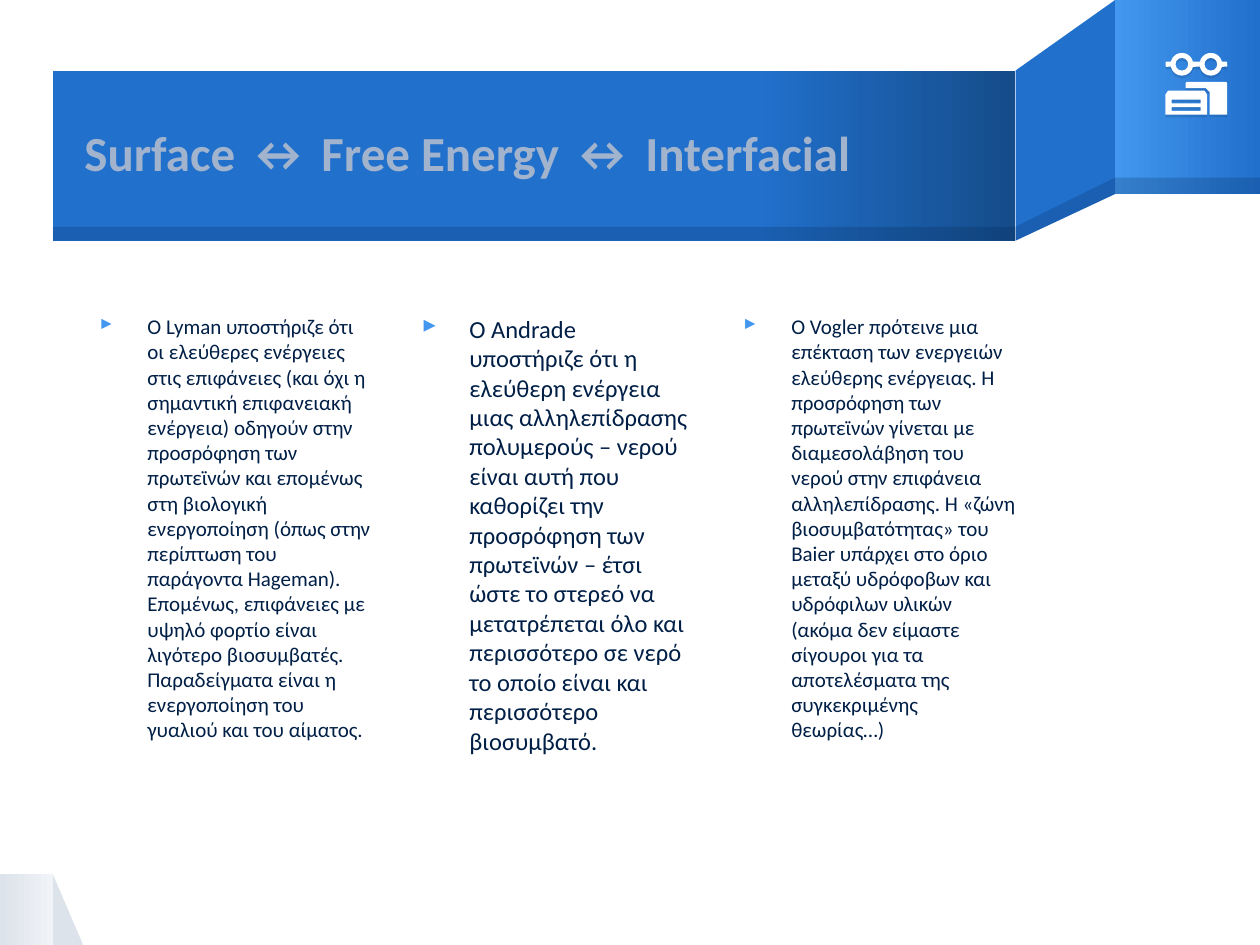
from pptx import Presentation
from pptx.dml.color import RGBColor
from pptx.enum.shapes import MSO_SHAPE
from pptx.enum.text import MSO_ANCHOR, PP_ALIGN
from pptx.oxml import parse_xml
from pptx.oxml.ns import nsdecls, qn
from pptx.oxml.xmlchemy import OxmlElement
from pptx.util import Inches, Pt

RECT, RIGHT_TRIANGLE = MSO_SHAPE.RECTANGLE, MSO_SHAPE.RIGHT_TRIANGLE
ROUNDED, DONUT = MSO_SHAPE.ROUNDED_RECTANGLE, MSO_SHAPE.DONUT
TOP, MIDDLE, LEFT = MSO_ANCHOR.TOP, MSO_ANCHOR.MIDDLE, PP_ALIGN.LEFT

# Content
TITLE = "Surface ↔ Free Energy ↔ Interfacial"
THEORIES = [
    ("Ο Lyman υποστήριζε ότι οι ελεύθερες ενέργειες στις επιφάνειες (και όχι η "
     "σημαντική επιφανειακή ενέργεια) οδηγούν στην προσρόφηση των πρωτεϊνών και "
     "επομένως στη βιολογική ενεργοποίηση (όπως στην περίπτωση του παράγοντα Hageman). "
     "Επομένως, επιφάνειες με υψηλό φορτίο είναι λιγότερο βιοσυμβατές. Παραδείγματα "
     "είναι η ενεργοποίηση του γυαλιού και του αίματος.", "small"),
    ("Ο Andrade υποστήριζε ότι η ελεύθερη ενέργεια μιας αλληλεπίδρασης πολυμερούς – "
     "νερού είναι αυτή που καθορίζει την προσρόφηση των πρωτεϊνών – έτσι ώστε το "
     "στερεό να μετατρέπεται όλο και περισσότερο σε νερό το οποίο είναι και "
     "περισσότερο βιοσυμβατό.", "large"),
    ("Ο Vogler πρότεινε μια επέκταση των ενεργειών ελεύθερης ενέργειας. Η προσρόφηση "
     "των πρωτεϊνών γίνεται με διαμεσολάβηση του νερού στην επιφάνεια αλληλεπίδρασης. "
     "Η «ζώνη βιοσυμβατότητας» του Baier υπάρχει στο όριο μεταξύ υδρόφοβων και "
     "υδρόφιλων υλικών (ακόμα δεν είμαστε σίγουροι για τα αποτελέσματα της "
     "συγκεκριμένης θεωρίας…)", "small"),
]

THEME = {
    "font": "Calibri", "title": 28, "small": 12, "large": 14,
    "ink": "001F46", "muted": "A1B3CD", "bright": "4397EE", "blue": "2170CC",
    "deep": "154C8A", "grey": "DDE3EB", "pale": "F0F3F7", "white": "FFFFFF",
}

# Layout in inches
SLIDE_W, SLIDE_H = 10, 7.5
BAND_LEFT, BAND_TOP, BAND_RIGHT, BAND_BOTTOM = 0.42, 0.56, 8.06, 1.91
TAB_LEFT, TAB_BOTTOM = 8.85, 1.54
BAND_EDGE, TAB_EDGE = 1.8, 1.41
CORNER_TOP = 6.94
TEXT_LEFT, TEXT_TOP, TEXT_H = 0.67, 2.49, 3.96
COLUMN_W = 2.28
COLUMN_GAP = (BAND_RIGHT - TEXT_LEFT - len(THEORIES) * COLUMN_W) / (len(THEORIES) - 1)

prs = Presentation()
prs.slide_width, prs.slide_height = Inches(SLIDE_W), Inches(SLIDE_H)
slide = prs.slides.add_slide(prs.slide_layouts[6])


def color(name):
    return RGBColor.from_string(THEME[name])


def paint(shape, fill, alpha=None, shadow=False):
    """Fill with a colour name or with a left-to-right list of (percent, name)."""
    shape.shadow.inherit = False
    shape.line.fill.background()
    if isinstance(fill, str):
        shape.fill.solid()
        shape.fill.fore_color.rgb = color(fill)
        if alpha:
            node = shape.fill._xPr.find(".//" + qn("a:srgbClr"))
            node.append(parse_xml(f'<a:alpha {nsdecls("a")} val="{alpha * 1000}"/>'))
    else:
        shape.fill.gradient()
        shape.fill.gradient_angle = 0
        stops = shape.fill._xPr.find(".//" + qn("a:gsLst"))
        for stop in list(stops):
            stops.remove(stop)
        for percent, name in fill:
            stops.append(parse_xml(
                f'<a:gs {nsdecls("a")} pos="{percent * 1000}">'
                f'<a:srgbClr val="{THEME[name]}"/></a:gs>'))
    if shadow:
        effects = shape._element.spPr.find(qn("a:effectLst"))
        effects.append(parse_xml(
            f'<a:outerShdw {nsdecls("a")} blurRad="0" dist="{Pt(1.5)}" dir="5400000">'
            f'<a:srgbClr val="{THEME["ink"]}"><a:alpha val="15000"/></a:srgbClr>'
            '</a:outerShdw>'))
    return shape


def block(kind, left, top, right, bottom, fill, **look):
    return paint(slide.shapes.add_shape(
        kind, Inches(left), Inches(top), Inches(right - left), Inches(bottom - top)),
        fill, **look)


def outline(contours, fill, **look):
    builder = None
    for contour in contours:
        points = [(Inches(x), Inches(y)) for x, y in contour]
        if builder is None:
            builder = slide.shapes.build_freeform(*points[0])
        else:
            builder.move_to(*points[0])
        builder.add_line_segments(points[1:], close=True)
    return paint(builder.convert_to_shape(), fill, **look)


def corners(left, top, right, bottom):
    return [(left, top), (right, top), (right, bottom), (left, bottom)]


def write(text, left, top, width, height, size, ink, bold=False, anchor=TOP,
          line_spacing=None, bullet=None):
    box = slide.shapes.add_textbox(Inches(left), Inches(top), Inches(width), Inches(height))
    frame = box.text_frame
    frame.word_wrap, frame.vertical_anchor = True, anchor
    frame.margin_left = frame.margin_top = frame.margin_right = frame.margin_bottom = 0
    paragraph = frame.paragraphs[0]
    paragraph.alignment = LEFT
    if line_spacing:
        paragraph.line_spacing = line_spacing
    if bullet:
        paragraph.space_before = Pt(6)
        props = paragraph._p.get_or_add_pPr()
        props.set("marL", str(Inches(0.5)))
        props.set("indent", str(Inches(-0.38)))
        props.append(parse_xml(
            f'<a:buClr {nsdecls("a")}><a:srgbClr val="{THEME["bright"]}"/></a:buClr>'))
        mark = OxmlElement("a:buChar")
        mark.set("char", bullet)
        props.append(mark)
    run = paragraph.add_run()
    run.text = text
    run.font.name, run.font.size, run.font.bold = THEME["font"], Pt(THEME[size]), bold
    run.font.color.rgb = color(ink)


# Folded corner at the bottom left
block(RIGHT_TRIANGLE, BAND_LEFT, CORNER_TOP, 0.66, SLIDE_H, "grey")
block(RECT, 0, CORNER_TOP, BAND_LEFT, SLIDE_H, [(0, "grey"), (100, "pale")])

# Ribbon: fold, raised tab and title band
outline([[(TAB_LEFT, 0), (BAND_RIGHT, BAND_TOP), (BAND_RIGHT, BAND_BOTTOM),
          (TAB_LEFT, TAB_BOTTOM)]], "blue")
block(RECT, TAB_LEFT, 0, SLIDE_W, TAB_BOTTOM, [(0, "bright"), (100, "blue")])
block(RECT, BAND_LEFT, BAND_TOP, BAND_RIGHT, BAND_BOTTOM,
      [(0, "blue"), (73, "blue"), (100, "deep")])

# Dark lower edge of the ribbon
outline([[(TAB_LEFT, TAB_EDGE), (BAND_RIGHT, BAND_EDGE), (BAND_RIGHT, BAND_BOTTOM),
          (TAB_LEFT, TAB_BOTTOM)]], "ink", alpha=20)
block(RECT, TAB_LEFT, TAB_EDGE, SLIDE_W, TAB_BOTTOM, "ink", alpha=20)
block(RECT, BAND_LEFT, BAND_EDGE, BAND_RIGHT, BAND_BOTTOM, "ink", alpha=20)

# Title and the three theories
write(TITLE, TEXT_LEFT, BAND_TOP, BAND_RIGHT - TEXT_LEFT, BAND_BOTTOM - BAND_TOP,
      "title", "muted", bold=True, anchor=MIDDLE, line_spacing=0.9)
for column, (theory, size) in enumerate(THEORIES):
    write(theory, TEXT_LEFT + column * (COLUMN_W + COLUMN_GAP), TEXT_TOP,
          COLUMN_W, TEXT_H, size, "ink", bullet="▸")

# Glasses
for left, right in [(9.25, 9.3), (9.46, 9.53), (9.69, 9.74)]:
    block(ROUNDED, left, 0.49, right, 0.53, "white", shadow=True)
for center in (9.38, 9.61):
    lens = block(DONUT, center - 0.09, 0.42, center + 0.09, 0.6, "white", shadow=True)
    lens.adjustments[0] = 0.22

# Stacked cards, the front one with two slots
outline([[(9.41, 0.66), (9.42, 0.65), (9.73, 0.65), (9.74, 0.66), (9.74, 0.91),
          (9.6, 0.91), (9.6, 0.73), (9.57, 0.7), (9.41, 0.7)]], "white", shadow=True)
slots = [corners(9.3, top, 9.53, top + 0.03)[::-1] for top in (0.79, 0.85)]
outline([[(9.25, 0.75), (9.27, 0.72), (9.56, 0.72), (9.58, 0.75), (9.58, 0.91),
          (9.25, 0.91)], *slots], "white", shadow=True)

prs.save("out.pptx")
